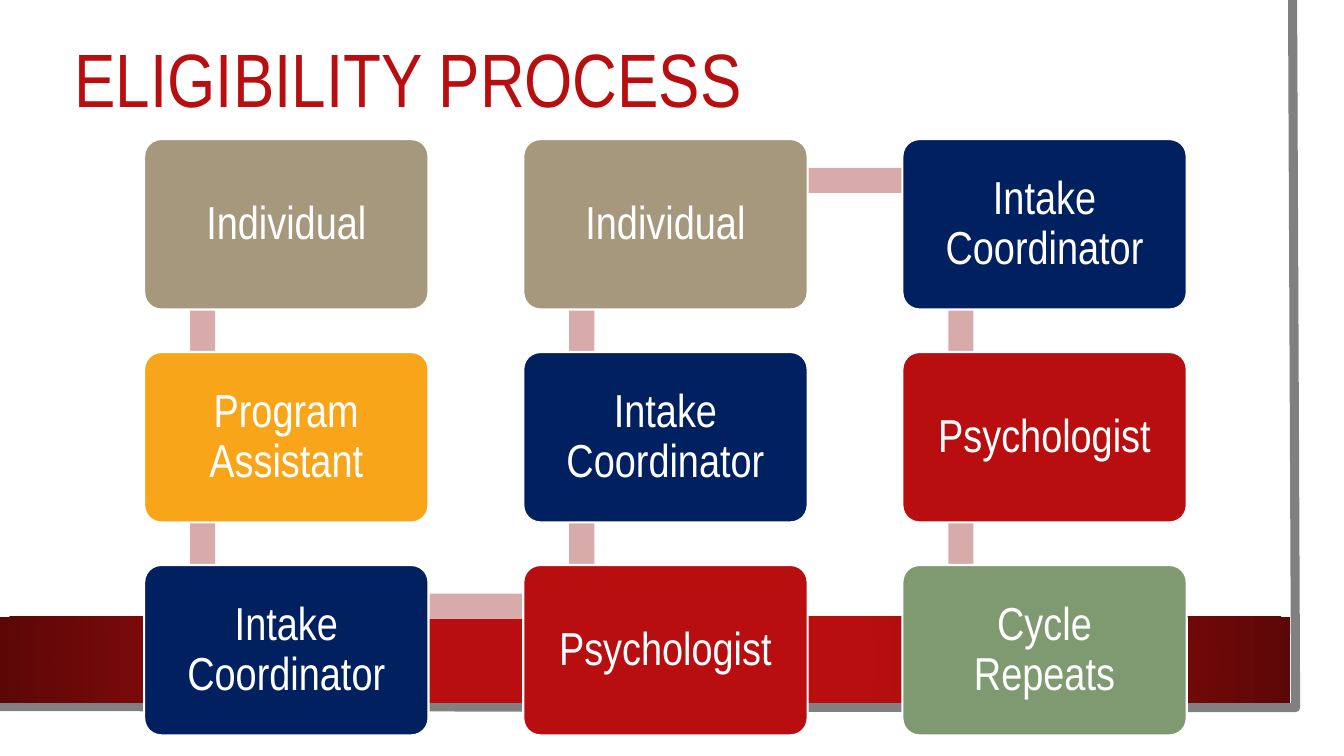
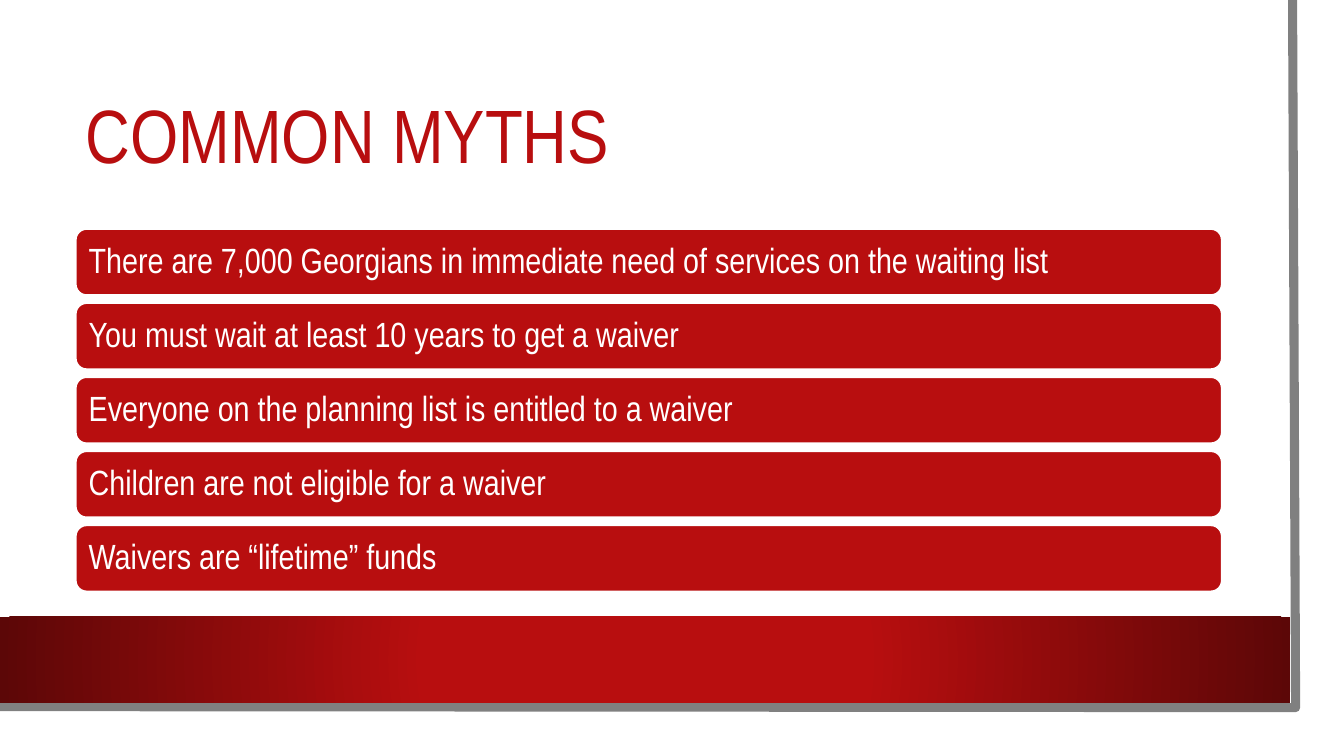
from lxml import etree
from pptx import Presentation
from pptx.dml.color import RGBColor
from pptx.enum.shapes import MSO_SHAPE
from pptx.enum.text import MSO_ANCHOR, MSO_AUTO_SIZE, PP_ALIGN
from pptx.util import Inches, Pt

RECT, ROUND = MSO_SHAPE.RECTANGLE, MSO_SHAPE.ROUNDED_RECTANGLE
LEFT, CENTER = PP_ALIGN.LEFT, PP_ALIGN.CENTER
MIDDLE, NO_FIT = MSO_ANCHOR.MIDDLE, MSO_AUTO_SIZE.NONE

FONT = "Arial Narrow"
RED, DARK, WHITE, GRAY = "B80E0F", "5C0707", "FFFFFF", "808080"
TAN, GOLD, NAVY, GREEN, PINK = "A6987D", "F9A519", "002060", "7F9A71", "D8ABAB"

# Content: steps run down the first column, up the second, down the third
STEPS = [
    ("Individual", TAN), ("Program Assistant", GOLD), ("Intake Coordinator", NAVY),
    ("Psychologist", RED), ("Intake Coordinator", NAVY), ("Individual", TAN),
    ("Intake Coordinator", NAVY), ("Psychologist", RED), ("Cycle Repeats", GREEN),
]
MYTHS = [
    "There are 7,000 Georgians in immediate need of services on the waiting list",
    "You must wait at least 10 years to get a waiver",
    "Everyone on the planning list is entitled to a waiver",
    "Children are not eligible for a waiver",
    "Waivers are “lifetime” funds",
]

# Grid, in inches
ROWS = 3
CARD_X, CARD_Y, CARD_W, CARD_H = 1.43, 1.38, 2.82, 1.69
COL_STEP, ROW_STEP = CARD_W * 4 / 3, CARD_H * 1.25
JOIN_X, JOIN_Y, BAR = 0.58, 0.41, 0.25
MYTH_X, MYTH_Y, MYTH_W, MYTH_H, MYTH_STEP = 0.75, 2.27, 11.37, 0.66, 0.735


def color(code):
    return RGBColor.from_string(code)


def write(shape, text, size, ink=WHITE, align=LEFT, inset=0.1):
    frame = shape.text_frame
    frame.word_wrap, frame.auto_size = True, NO_FIT
    frame.vertical_anchor = MIDDLE
    frame.margin_left = frame.margin_right = Inches(inset)
    frame.margin_top = frame.margin_bottom = Inches(inset)
    para = frame.paragraphs[0]
    para.text, para.alignment, para.line_spacing = text, align, 0.9
    para.font.name, para.font.size = FONT, Pt(size)
    para.font.color.rgb = color(ink)


def box(slide, kind, area, fill, edge=None):
    shape = slide.shapes.add_shape(kind, *map(Inches, area))
    shape.shadow.inherit = False
    shape.fill.solid()
    shape.fill.fore_color.rgb = color(fill)
    if edge:
        shape.line.color.rgb = color(edge)
        shape.line.width = Pt(1.5)
    else:
        shape.line.fill.background()
    return shape


def shade(shape):
    """Radial gradient: red in the middle, dark at the ends."""
    old = shape._element.spPr.find("{*}solidFill")
    grad = etree.fromstring(
        '<a:gradFill xmlns:a="http://schemas.openxmlformats.org/drawingml/2006/main">'
        f'<a:gsLst><a:gs pos="34000"><a:srgbClr val="{RED}"/></a:gs>'
        f'<a:gs pos="100000"><a:srgbClr val="{DARK}"/></a:gs></a:gsLst>'
        '<a:path path="circle"><a:fillToRect l="50000" t="50000" r="50000" b="50000"/>'
        '</a:path></a:gradFill>')
    old.getparent().replace(old, grad)


def frame_page(slide):
    """Draw the page edge and red band, then move them to the layout."""
    points = [(Inches(x), Inches(y)) for x, y in [(12.82, 0), (12.85, 7.02), (-0.03, 7.01)]]
    path = slide.shapes.build_freeform(*points[0])
    path.add_line_segments(points[1:], close=False)
    edge = path.convert_to_shape()
    edge.shadow.inherit = False
    edge.fill.background()
    edge.line.color.rgb = color(GRAY)
    edge.line.width = Pt(6.5)
    band = box(slide, RECT, (0, 6.12, 12.8, 0.85), RED)
    shade(band)
    tree = slide.slide_layout.shapes._spTree
    for place, shape in enumerate((edge, band), 2):
        tree.insert(place, shape._element)


def add_page(deck, title, x, y):
    slide = deck.slides.add_slide(deck.slide_layouts[5])
    head = slide.shapes.title
    head.left, head.top, head.width, head.height = map(Inches, (x, y, 11.37, 1.26))
    write(head, title, 54, RED)
    return slide


def draw_steps(slide):
    spots = []
    for i in range(len(STEPS)):
        col, row = divmod(i, ROWS)
        if col % 2:
            row = ROWS - 1 - row
        spots.append((CARD_X + col * COL_STEP, CARD_Y + row * ROW_STEP))
    # Bars lie behind the cards they join
    for (x1, y1), (x2, y2) in zip(spots, spots[1:]):
        x, y = min(x1, x2) + JOIN_X, min(y1, y2) + JOIN_Y
        wide, high = abs(x2 - x1), abs(y2 - y1)
        box(slide, RECT, (x - BAR / 2, y - BAR / 2, wide + BAR, high + BAR), PINK)
    for (x, y), (text, fill) in zip(spots, STEPS):
        card = box(slide, ROUND, (x, y, CARD_W, CARD_H), fill, WHITE)
        card.adjustments[0] = 0.1
        write(card, text, 33, align=CENTER, inset=0.14)


def draw_myths(slide):
    for i, text in enumerate(MYTHS):
        area = (MYTH_X, MYTH_Y + i * MYTH_STEP, MYTH_W, MYTH_H)
        write(box(slide, ROUND, area, RED, WHITE), text, 25)


def main():
    deck = Presentation()
    deck.slide_width, deck.slide_height = Inches(13.33), Inches(7.5)
    first = add_page(deck, "ELIGIBILITY PROCESS", 0.64, 0.19)
    frame_page(first)
    draw_steps(first)
    draw_myths(add_page(deck, "COMMON MYTHS", 0.75, 0.75))
    deck.save("out.pptx")


if __name__ == "__main__":
    main()
